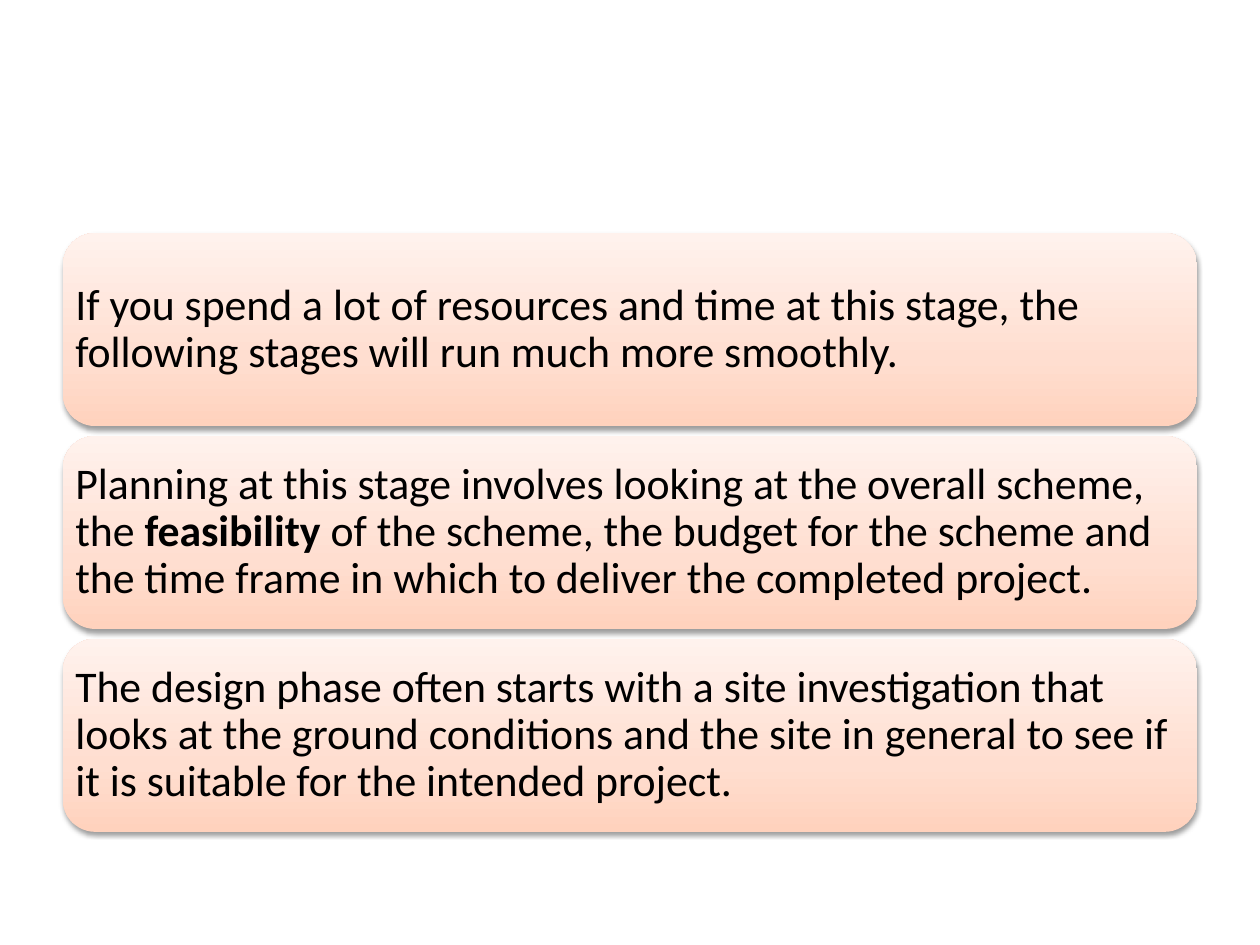
from pptx import Presentation
from pptx.dml.color import RGBColor
from pptx.enum.shapes import MSO_SHAPE as Shape
from pptx.enum.text import MSO_ANCHOR as Anchor, PP_ALIGN as Align
from pptx.oxml import parse_xml
from pptx.oxml.ns import nsdecls, qn
from pptx.util import Cm, Pt

BLACK = RGBColor(0x00, 0x00, 0x00)
GRADIENT = [
    (0, RGBColor(0xFF, 0xD2, 0xBD)),
    (35, RGBColor(0xFF, 0xDE, 0xD0)),
    (100, RGBColor(0xFF, 0xF2, 0xED)),
]

# Each statement is a list of (text, bold) spans
STATEMENTS = [
    [("If you spend a lot of resources and time at this stage, the following "
      "stages will run much more smoothly.", False)],
    [("Planning at this stage involves looking at the overall scheme, the ", False),
     ("feasibility", True),
     (" of the scheme, the budget for the scheme and the time frame in which "
      "to deliver the completed project.", False)],
    [("The design phase often starts with a site investigation that looks at "
      "the ground conditions and the site in general to see if it is suitable "
      "for the intended project.", False)],
]

LEFT, TOP = Cm(1.27), Cm(4.7)
WIDTH, HEIGHT = Cm(22.86), Cm(3.89)
PITCH = Cm(4.09)
MARGIN = Cm(0.06)  # added to the inset of the rounded corners


def add_span(para, text, *, bold=False, size=25, color=BLACK, font="Calibri"):
    span = para.add_run()
    span.text = text
    span.font.name = font
    span.font.size = Pt(size)
    span.font.bold = bold
    span.font.color.rgb = color


def style_panel(box):
    """Give the panel an upward gradient, no outline and a soft shadow below."""
    box.line.fill.background()
    box.shadow.inherit = False
    stops = "".join(
        f'<a:gs pos="{place * 1000}"><a:srgbClr val="{color}"/></a:gs>'
        for place, color in GRADIENT
    )
    properties = box._element.spPr
    properties.find(qn("a:prstGeom")).addnext(parse_xml(
        f'<a:gradFill {nsdecls("a")} rotWithShape="1"><a:gsLst>{stops}</a:gsLst>'
        '<a:lin ang="16200000" scaled="0"/></a:gradFill>'
    ))
    properties.find(qn("a:effectLst")).append(parse_xml(
        f'<a:outerShdw {nsdecls("a")} blurRad="{Pt(3.1)}" dist="{Pt(1.6)}" '
        'dir="5400000" rotWithShape="0">'
        f'<a:srgbClr val="{BLACK}"><a:alpha val="38000"/></a:srgbClr></a:outerShdw>'
    ))


deck = Presentation()
deck.slide_width, deck.slide_height = Cm(25.4), Cm(19.05)
page = deck.slides.add_slide(deck.slide_layouts[6])

# Stacked statement panels
for row, spans in enumerate(STATEMENTS):
    box = page.shapes.add_shape(
        Shape.ROUNDED_RECTANGLE, LEFT, TOP + row * PITCH, WIDTH, HEIGHT)
    style_panel(box)

    frame = box.text_frame
    frame.word_wrap = True
    frame.vertical_anchor = Anchor.MIDDLE
    frame.margin_left = frame.margin_right = MARGIN
    frame.margin_top = frame.margin_bottom = MARGIN

    para = frame.paragraphs[0]
    para.alignment = Align.LEFT
    para.line_spacing = 0.9
    for text, bold in spans:
        add_span(para, text, bold=bold)

deck.save("out.pptx")
